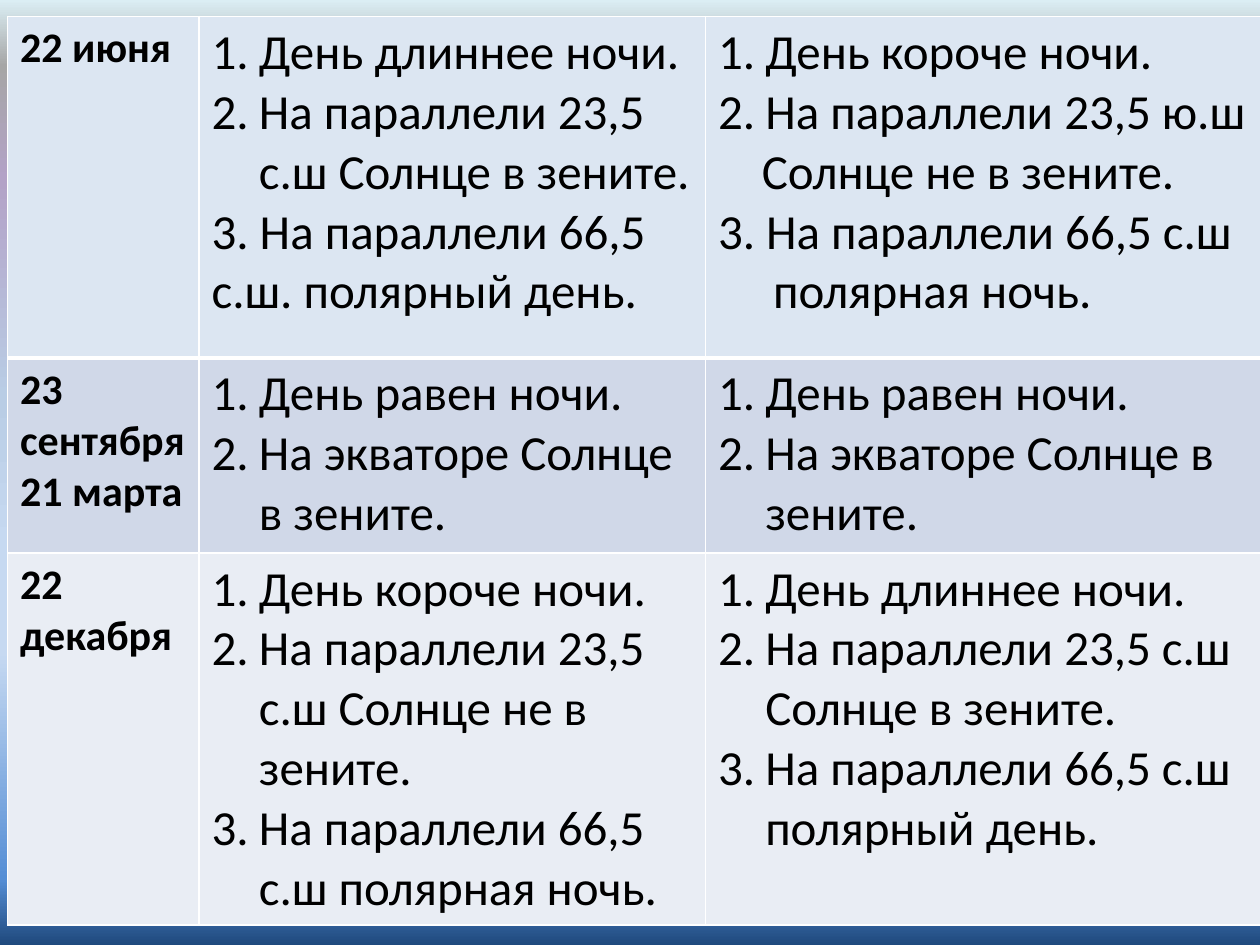
from lxml import etree
from pptx import Presentation
from pptx.dml.color import RGBColor
from pptx.oxml.ns import qn
from pptx.util import Pt

FONT = "Calibri"
INK = "000000"
BORDER = "FFFFFF"
DATE_SIZE = 24
FACT_SIZE = 28
NUMBER_INDENT = 27
SKY = [
    (0, "1F497D"), (7, "558ED5"), (31, "C6D9F1"), (42, "C6D9F1"),
    (58, "B9CDE5"), (81, "B3A2C7"), (93, "A6A6A6"), (100, "DBEEF4"),
]


def color(hex_code):
    return RGBColor.from_string(hex_code)


def numbered(*texts):
    return [(text, NUMBER_INDENT, True) for text in texts]


def plain(text, indent=0):
    return [(text, indent, False)]


class SeasonSlide:
    def __init__(self, presentation):
        self.slide = presentation.slides.add_slide(presentation.slide_layouts[6])

    def background(self, stops):
        fill = self.slide.background.fill
        fill.gradient()
        fill.gradient_angle = 90
        stop_list = self.slide.background._cSld.find(".//" + qn("a:gsLst"))
        for old_stop in list(stop_list):
            stop_list.remove(old_stop)
        for percent, hex_code in stops:
            stop = etree.SubElement(stop_list, qn("a:gs"), pos=str(percent * 1000))
            etree.SubElement(stop, qn("a:srgbClr"), val=hex_code)

    def table(self, left, top, widths, heights):
        frame = self.slide.shapes.add_table(
            len(heights), len(widths), Pt(left), Pt(top),
            Pt(sum(widths)), Pt(sum(heights)))
        table = frame.table
        table.first_row = False
        table.horz_banding = False
        for column, width in zip(table.columns, widths):
            column.width = Pt(width)
        for row, height in zip(table.rows, heights):
            row.height = Pt(height)
        return table

    def borders(self, cell, widths):
        properties = cell._tc.get_or_add_tcPr()
        for side, width in widths.items():
            line = etree.SubElement(properties, qn("a:ln" + side), w=str(Pt(width)))
            fill = etree.SubElement(line, qn("a:solidFill"))
            etree.SubElement(fill, qn("a:srgbClr"), val=BORDER)

    def cell(self, cell, lines, fill, size, bold, border_widths):
        self.borders(cell, border_widths)
        cell.fill.solid()
        cell.fill.fore_color.rgb = color(fill)
        frame = cell.text_frame
        for index, (text, indent, is_numbered) in enumerate(lines):
            paragraph = frame.add_paragraph() if index else frame.paragraphs[0]
            paragraph.text = text
            font = paragraph.font
            font.name, font.size, font.bold = FONT, Pt(size), bold
            font.color.rgb = color(INK)
            properties = paragraph._p.get_or_add_pPr()
            properties.set("marL", str(Pt(indent)))
            if is_numbered:
                properties.set("indent", str(-Pt(indent)))
                numbering = etree.Element(qn("a:buAutoNum"), type="arabicPeriod")
                properties.insert(0, numbering)


EQUINOX = numbered("День равен ночи.", "На экваторе Солнце в зените.")

SEASONS = [
    ("DCE6F2",
     plain("22 июня"),
     numbered("День длиннее ночи.", "На параллели 23,5 с.ш Солнце в зените.")
     + plain("3. На параллели 66,5 с.ш. полярный день."),
     numbered("День короче ночи.", "На параллели 23,5 ю.ш")
     + plain("Солнце не в зените.", 25)
     + plain("3. На параллели 66,5 с.ш")
     + plain("полярная ночь.", 31.5)),
    ("D0D8E8",
     plain("23 сентября") + plain("21 марта"),
     EQUINOX,
     EQUINOX),
    ("E9EDF4",
     plain("22 декабря"),
     numbered("День короче ночи.", "На параллели 23,5 с.ш Солнце не в зените.",
              "На параллели 66,5 с.ш полярная ночь."),
     numbered("День длиннее ночи.", "На параллели 23,5 с.ш Солнце в зените.",
              "На параллели 66,5 с.ш полярный день.")),
]


def main():
    presentation = Presentation()
    presentation.slide_width = Pt(720)
    presentation.slide_height = Pt(540)
    page = SeasonSlide(presentation)
    page.background(SKY)
    calendar = page.table(4.3, 9.4, [109.4, 289.4, 320.4], [195.1, 111.6, 186.5])
    for row, (fill, *columns) in enumerate(SEASONS):
        border_widths = {"L": 1, "R": 1, "T": 1, "B": 1}
        if row == 0:
            border_widths["B"] = 3
        elif row == 1:
            del border_widths["T"]
        for column, lines in enumerate(columns):
            is_date = column == 0
            size = DATE_SIZE if is_date else FACT_SIZE
            page.cell(calendar.cell(row, column), lines, fill, size, is_date, border_widths)
    presentation.save("out.pptx")


if __name__ == "__main__":
    main()
